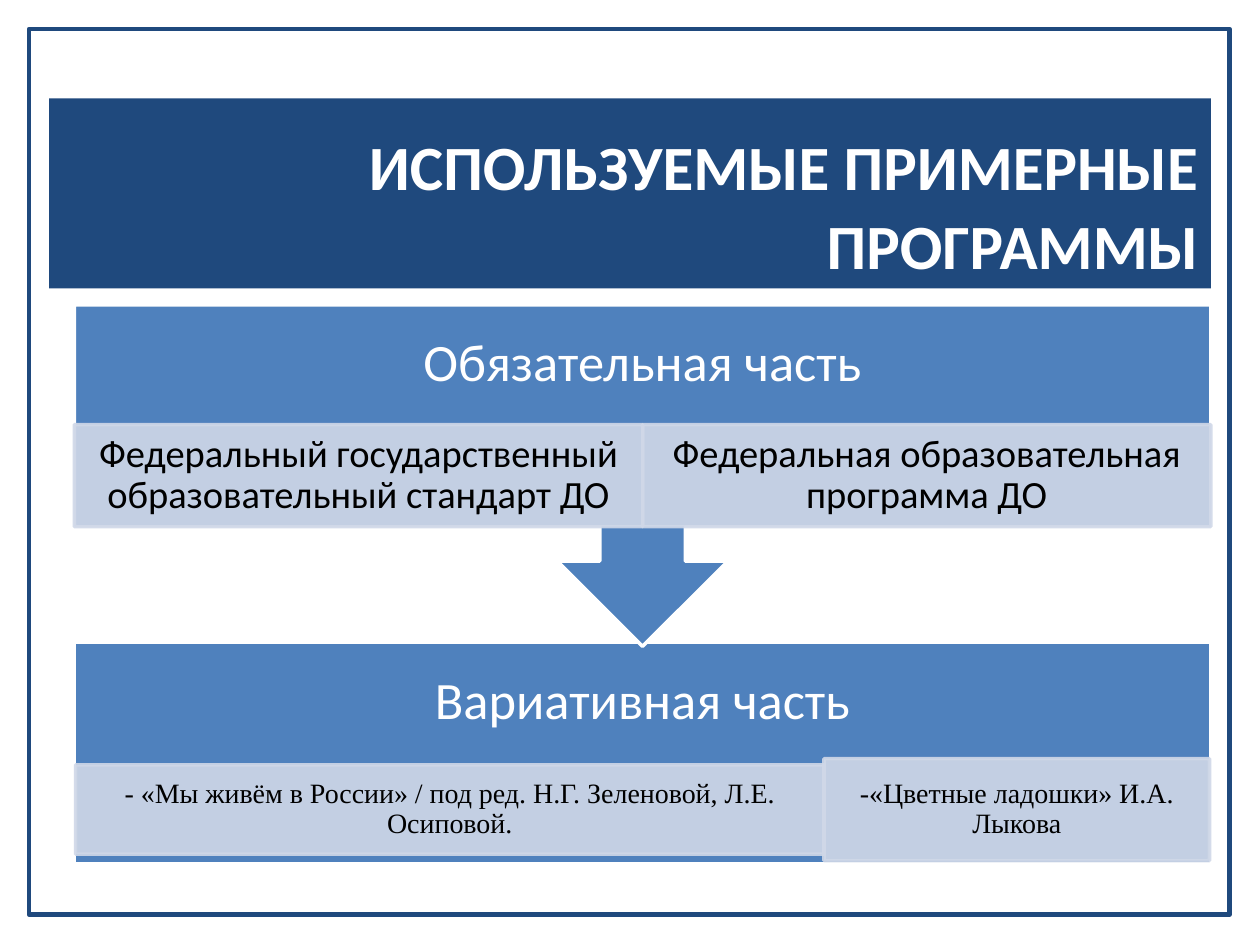
import pptx
import pptx.dml.color
import pptx.enum.shapes
import pptx.enum.text
import pptx.oxml
import pptx.oxml.ns
import pptx.util

Inches = pptx.util.Inches
Pt = pptx.util.Pt
RGBColor = pptx.dml.color.RGBColor
Shape = pptx.enum.shapes.MSO_SHAPE
Align = pptx.enum.text.PP_ALIGN
Anchor = pptx.enum.text.MSO_ANCHOR

NAVY = RGBColor(0x1F, 0x49, 0x7D)
BLUE = RGBColor(0x4F, 0x81, 0xBD)
PALE = RGBColor(0xD0, 0xD8, 0xE8)
WHITE = RGBColor(0xFF, 0xFF, 0xFF)
BLACK = RGBColor(0x00, 0x00, 0x00)

LEFT, WIDTH = 0.59, 9.02
HEADING_HEIGHT = 0.95


class SlideBuilder:
    heading_font = "Calibri"

    def __init__(self, slide):
        self.slide = slide

    def set_text(self, shape, text, size, color, font, insets, bold=False,
                 align=Align.CENTER, anchor=Anchor.MIDDLE, spacing=0.9):
        frame = shape.text_frame
        frame.word_wrap = True
        frame.auto_size = pptx.enum.text.MSO_AUTO_SIZE.NONE
        frame.vertical_anchor = anchor
        frame.margin_left = frame.margin_right = Inches(insets[0])
        frame.margin_top = frame.margin_bottom = Inches(insets[1])
        paragraph = frame.paragraphs[0]
        paragraph.alignment = align
        paragraph.line_spacing = spacing
        run = paragraph.add_run()
        run.text = text
        run.font.name = font
        run.font.size = Pt(size)
        run.font.bold = bold
        run.font.color.rgb = color

    def title(self, text, left, top, width, height):
        shape = self.slide.shapes.title
        shape.left, shape.top = Inches(left), Inches(top)
        shape.width, shape.height = Inches(width), Inches(height)
        shape.fill.solid()
        shape.fill.fore_color.rgb = NAVY
        self.set_text(shape, text, 36, WHITE, self.heading_font, (0.1, 0.05),
                      True, Align.RIGHT, Anchor.BOTTOM, 1.05)

    def box(self, kind, left, top, width, height, fill, line, weight=2):
        shape = self.slide.shapes.add_shape(
            kind, Inches(left), Inches(top), Inches(width), Inches(height))
        shape.shadow.inherit = False
        if fill is None:
            shape.fill.background()
        else:
            shape.fill.solid()
            shape.fill.fore_color.rgb = fill
        shape.line.color.rgb = line
        shape.line.width = Pt(weight)
        return shape

    def heading(self, text, top):
        shape = self.slide.shapes.add_textbox(
            Inches(LEFT), Inches(top), Inches(WIDTH), Inches(HEADING_HEIGHT))
        self.set_text(shape, text, 30, WHITE, self.heading_font, (0.23, 0.23))

    def program(self, text, left, top, width, height, size, font, insets):
        shape = self.box(Shape.RECTANGLE, left, top, width, height, PALE, PALE)
        # Fill and outline are both 90 % opaque
        for color in shape._element.spPr.iter(pptx.oxml.ns.qn("a:srgbClr")):
            color.append(pptx.oxml.parse_xml(
                f'<a:alpha {pptx.oxml.ns.nsdecls("a")} val="90000"/>'))
        self.set_text(shape, text, size, BLACK, font, insets)


def main():
    presentation = pptx.Presentation()
    presentation.slide_width = Inches(10)
    presentation.slide_height = Inches(7.5)
    builder = SlideBuilder(
        presentation.slides.add_slide(presentation.slide_layouts[5]))

    # Frame and title banner
    builder.box(Shape.RECTANGLE, 0.23, 0.23, 9.53, 7.03, None, NAVY, 2.5)
    builder.title("ИСПОЛЬЗУЕМЫЕ ПРИМЕРНЫЕ ПРОГРАММЫ", 0.39, 0.78, 9.22, 1.51)

    # Variable part
    builder.box(Shape.RECTANGLE, LEFT, 5.1, WIDTH, 1.76, BLUE, WHITE)
    builder.heading("Вариативная часть", 5.1)
    for text, left, top, width, height in (
        ("- «Мы живём в России» / под ред. Н.Г. Зеленовой, Л.Е. Осиповой.",
         0.6, 6.07, 5.94, 0.71),
        ("-«Цветные ладошки» И.А. Лыкова", 6.54, 6.02, 3.06, 0.81),
    ):
        builder.program(text, left, top, width, height, 16,
                        "Times New Roman", (0.12, 0.02))

    # Mandatory part, with its arrow pointing down
    callout = builder.box(Shape.UP_ARROW_CALLOUT, LEFT, 2.42, WIDTH, 2.71,
                          BLUE, WHITE)
    callout.rotation = 180
    builder.heading("Обязательная часть", 2.42)
    standards = ("Федеральный государственный образовательный стандарт ДО",
                 "Федеральная образовательная программа ДО")
    width = WIDTH / len(standards)
    for index, text in enumerate(standards):
        builder.program(text, LEFT + index * width, 2.42 + HEADING_HEIGHT,
                        width, 0.81, 22, "Calibri", (0.17, 0.03))

    presentation.save("out.pptx")


if __name__ == "__main__":
    main()
